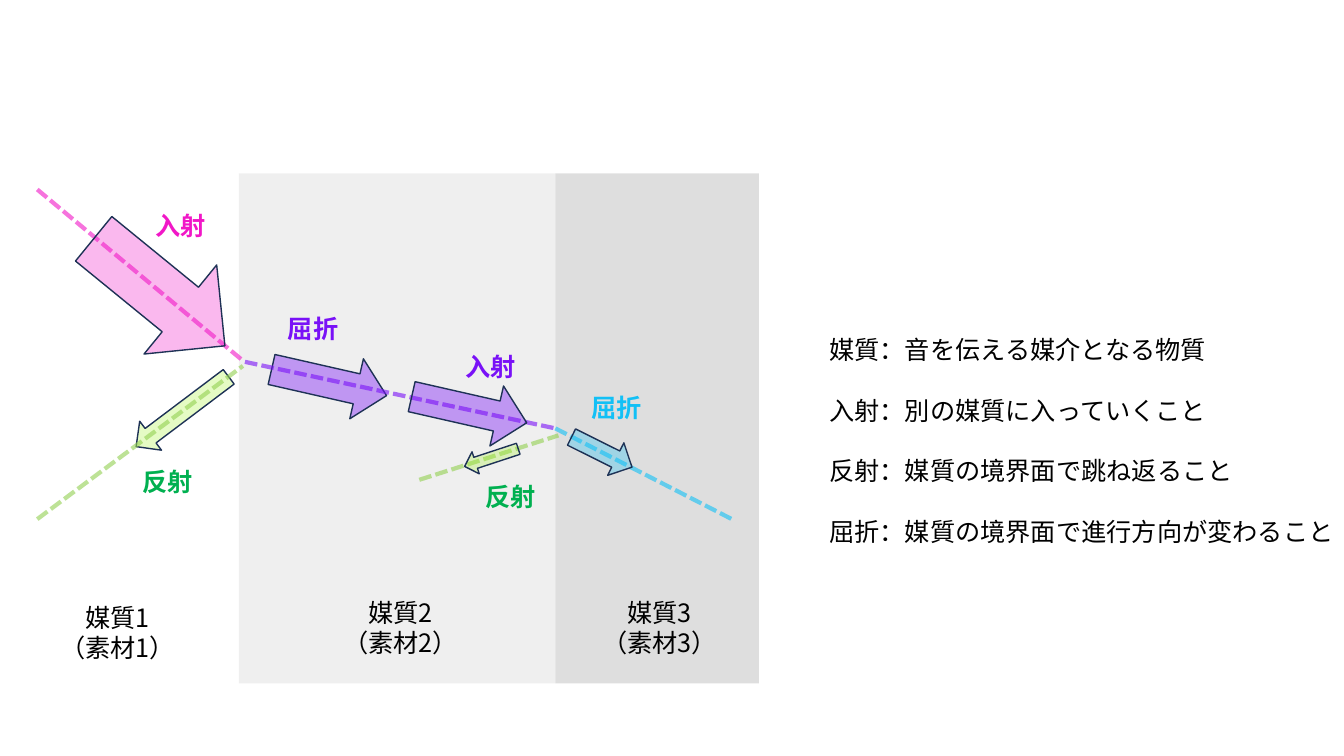
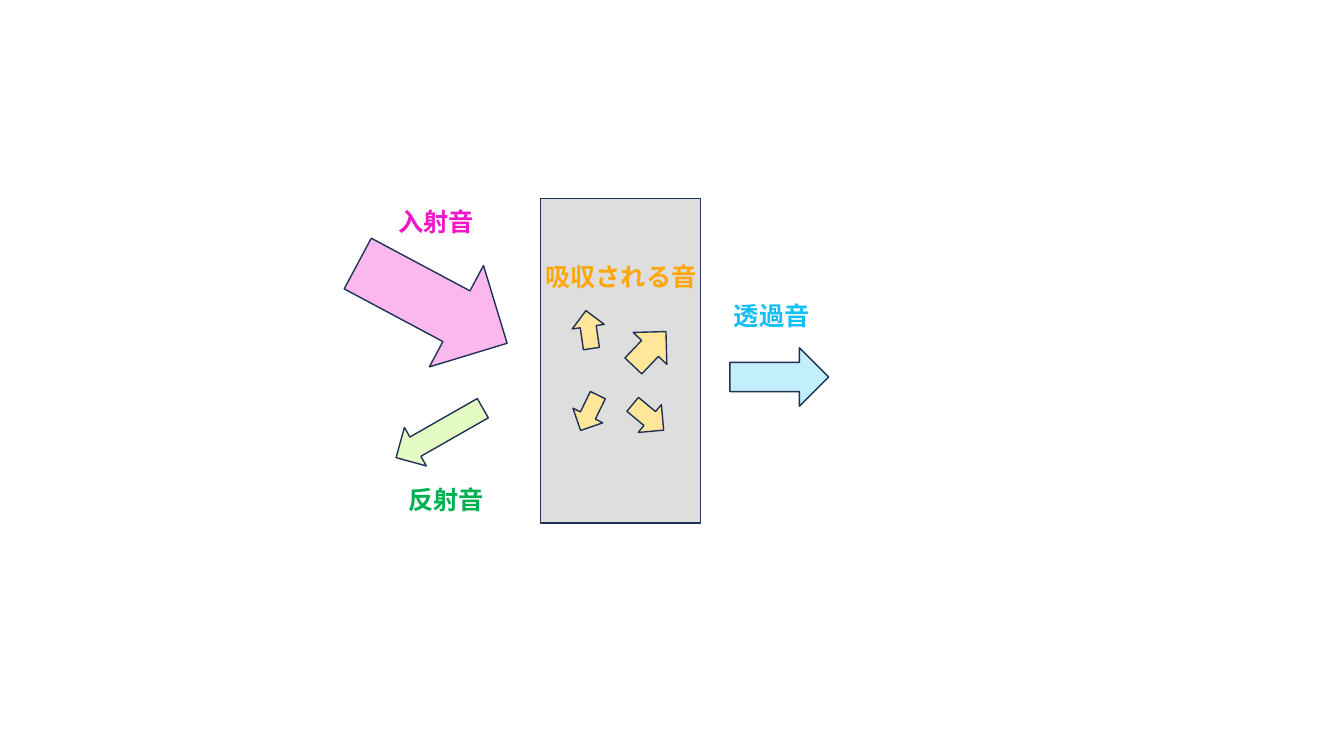
from pptx import Presentation
from pptx import util as u
from pptx.dml.color import RGBColor
from pptx.enum import dml, shapes, text
from pptx.oxml.ns import qn
from lxml import etree

CELL = u.Inches(0.1)
COLUMNS, ROWS = 133.33, 75
FONT = "Noto Sans CJK JP"
SIZE = u.Pt(18)
LINE_PITCH = u.Pt(21.6)

BLACK = RGBColor(0x00, 0x00, 0x00)
OUTLINE = RGBColor(0x1E, 0x32, 0x56)
PINK = RGBColor(0xF1, 0x17, 0xC7)
PURPLE = RGBColor(0x79, 0x11, 0xF7)
BLUE = RGBColor(0x12, 0xC0, 0xF6)
LIME = RGBColor(0x99, 0xF1, 0x17)
LEAF = RGBColor(0x92, 0xD0, 0x50)
GREEN = RGBColor(0x00, 0xB0, 0x50)
ORANGE = RGBColor(0xFE, 0xA7, 0x0A)
CREAM = RGBColor(0xFF, 0xE6, 0x99)
LIGHT_GREY = RGBColor(0xD9, 0xD9, 0xD9)
GREY = RGBColor(0xBF, 0xBF, 0xBF)

DOWN = shapes.MSO_SHAPE.DOWN_ARROW
RIGHT = shapes.MSO_SHAPE.RIGHT_ARROW
RECTANGLE = shapes.MSO_SHAPE.RECTANGLE


def cells(*counts):
    """Turn counts of grid cells into lengths."""
    return [u.Emu(round(count * CELL)) for count in counts]


def set_opacity(element, percent):
    """Give every colour inside an element the same opacity."""
    for colour in element.iter(qn("a:srgbClr")):
        etree.SubElement(colour, qn("a:alpha"), val=str(percent * 1000))


def add_figure(page, kind, area, colour, opacity=100, rotation=0, outlined=True):
    """Add a filled preset shape and return it."""
    figure = page.shapes.add_shape(kind, *cells(*area))
    figure.shadow.inherit = False
    figure.rotation = rotation
    figure.fill.solid()
    figure.fill.fore_color.rgb = colour
    if opacity < 100:
        set_opacity(figure._element.spPr, opacity)
    if outlined:
        figure.line.color.rgb = OUTLINE
        figure.line.width = u.Pt(1)
    else:
        figure.line.fill.background()
    return figure


def add_ray(page, start, end, colour):
    """Add a translucent dashed line and return it."""
    ray = page.shapes.add_connector(
        shapes.MSO_CONNECTOR.STRAIGHT, *cells(*start, *end))
    ray.line.color.rgb = colour
    ray.line.width = u.Pt(3)
    ray.line.dash_style = dml.MSO_LINE.SQUARE_DOT
    properties = ray._element.spPr
    set_opacity(properties, 60)
    etree.SubElement(properties, qn("a:effectLst"))
    return ray


def add_text(page, lines, area, colour=BLACK, bold=False, centred=True, gap=0):
    """Add a vertically centred text box with one paragraph per line."""
    box = page.shapes.add_textbox(*cells(*area))
    frame = box.text_frame
    frame.word_wrap = True
    frame.vertical_anchor = text.MSO_ANCHOR.MIDDLE
    if not centred:
        frame.margin_right = 0
    for index, line in enumerate(lines):
        para = frame.add_paragraph() if index else frame.paragraphs[0]
        para.alignment = text.PP_ALIGN.CENTER if centred else text.PP_ALIGN.LEFT
        if len(lines) > 1:
            para.line_spacing = LINE_PITCH
        if index and gap:
            para.space_before = gap
        span = para.add_run()
        span.text = line
        span.font.name = FONT
        span.font.size = SIZE
        span.font.bold = bold
        span.font.color.rgb = colour
        latin = span.font._element.find(qn("a:latin"))
        latin.addnext(latin.makeelement(qn("a:ea"), {"typeface": FONT}))


def add_label(page, word, left, top, colour, width=14.1):
    """Add the bold coloured name of a sound path."""
    add_text(page, [word], (left, top, width, 4.6), colour, bold=True)


def add_arrows(page, arrows):
    """Add block arrows from rows of kind, area, colour, opacity and rotation."""
    for arrow in arrows:
        add_figure(page, *arrow)


def build_refraction(page):
    """Draw sound passing through three media, with the terms explained."""
    second = add_figure(page, RECTANGLE, (23.7, 17.2, 31.4, 50.6),
                        LIGHT_GREY, 40, outlined=False)
    third = add_figure(page, RECTANGLE, (55.1, 17.2, 20.2, 50.6),
                       GREY, 50, outlined=False)
    add_arrows(page, [
        (DOWN, (16.3, 35.1, 3.6, 11.5), LIME, 25, 53),
        (DOWN, (29.6, 32.1, 6.1, 11.7), PURPLE, 40, 282.8),
    ])
    add_ray(page, (3.7, 18.8), (24, 35.7), PINK)
    add_ray(page, (3.7, 51.5), (24.1, 36.3), LEAF)
    add_ray(page, (24.3, 35.9), (55.1, 42.5), PURPLE).end_connect(second, 3)
    add_ray(page, (55.1, 42.5), (72.6, 51.5), BLUE).begin_connect(third, 1)
    add_ray(page, (41.6, 47.6), (55.4, 43.2), LEAF)
    add_arrows(page, [
        (DOWN, (10.1, 20.6, 11.4, 16.8), PINK, 30, 309.2),
        (DOWN, (43.5, 34.8, 6.1, 11.7), PURPLE, 40, 282.8),
        (DOWN, (57.9, 41.5, 3.6, 6.7), BLUE, 30, 296.5),
        (DOWN, (47.6, 42.6, 2.3, 5.6), LIME, 25, 71.8),
    ])
    for label in [
        ("入射", 10.9, 20.1, PINK),
        ("反射", 9.6, 45.5, GREEN),
        ("屈折", 24, 30.3, PURPLE),
        ("入射", 41.6, 34.1, PURPLE),
        ("屈折", 54.1, 38.1, BLUE),
        ("反射", 43.6, 47, GREEN),
    ]:
        add_label(page, *label)
    media = [(4.6, 58.6), (32.7, 58.1), (58.4, 58.1)]
    for number, (left, top) in enumerate(media, 1):
        add_text(page, [f"媒質{number}", f"（素材{number}）"],
                 (left, top, 14.1, 8.3))
    add_text(page, [
        "媒質：音を伝える媒介となる物質",
        "入射：別の媒質に入っていくこと",
        "反射：媒質の境界面で跳ね返ること",
        "屈折：媒質の境界面で進行方向が変わること",
    ], (81.3, 31.5, 52, 24.4), centred=False, gap=LINE_PITCH)


def build_absorption(page):
    """Draw sound reflected, absorbed and let through by a wall."""
    add_figure(page, RECTANGLE, (53.6, 19.7, 15.9, 32.2), GREY, 50)
    add_arrows(page, [
        (DOWN, (74.4, 32.5, 5.8, 9.8), BLUE, 25, 270),
        (DOWN, (41.4, 38, 4.4, 9.9), LIME, 25, 60.3),
        (DOWN, (37.2, 21.7, 11.4, 16.8), PINK, 30, 298.1),
        (RIGHT, (62.1, 32.3, 4.7, 4.6), CREAM, 100, 313.5),
        (RIGHT, (56.5, 31.1, 3.8, 3.2), CREAM, 100, 261.8),
        (RIGHT, (56.5, 39.3, 3.9, 3.3), CREAM, 100, 116),
        (RIGHT, (62.3, 39.6, 4, 3.6), CREAM, 100, 39.8),
    ])
    add_label(page, "入射音", 36.2, 19.7, PINK)
    add_label(page, "透過音", 69.5, 29, BLUE)
    add_label(page, "反射音", 37.2, 47.3, GREEN)
    add_label(page, "吸収される音", 53.1, 25.1, ORANGE, width=17)


def main():
    """Build the deck and save it."""
    deck = Presentation()
    deck.slide_width, deck.slide_height = cells(COLUMNS, ROWS)
    for build in (build_refraction, build_absorption):
        build(deck.slides.add_slide(deck.slide_layouts[6]))
    deck.save("out.pptx")


if __name__ == "__main__":
    main()
